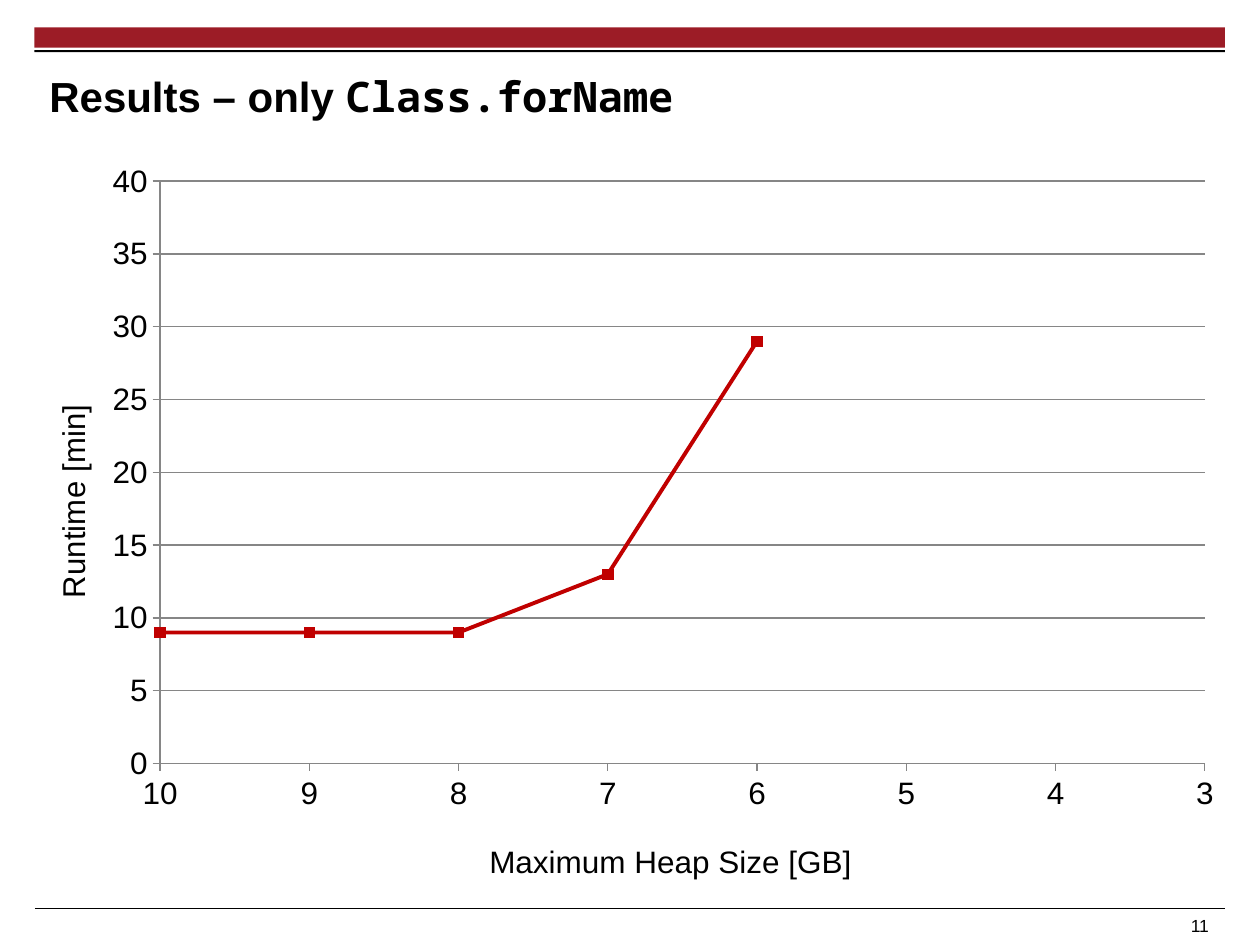
from dataclasses import dataclass

import pptx
import pptx.chart.data
import pptx.dml.color
import pptx.enum.chart
import pptx.enum.shapes
import pptx.enum.text
import pptx.oxml
import pptx.oxml.ns
import pptx.util
from pptx.dml.color import RGBColor
from pptx.util import Pt

BLACK = RGBColor(0x00, 0x00, 0x00)
CRIMSON = RGBColor(0x9C, 0x1C, 0x26)
RED = RGBColor(0xC0, 0x00, 0x00)
GRAY = RGBColor(0x86, 0x86, 0x86)
SANS, MONO = "Arial", "Noto Sans Mono"


@dataclass
class Bar:
    x: float
    y: float
    w: float
    h: float
    color: RGBColor


@dataclass
class Run:
    text: str
    size: float
    font: str = SANS
    bold: bool = False


HEADER_BARS = [
    Bar(19.6, 15.6, 680.4, 11.6, CRIMSON),
    Bar(19.6, 28.6, 680.4, 1.2, BLACK),
]
TITLE = [Run("Results – only ", 24, bold=True),
         Run("Class.forName", 24, MONO, True)]
HEAP_SIZES = ["10", "9", "8", "7", "6", "5", "4", "3"]
RUNTIMES = [9, 9, 9, 13, 29, None, None, None]


def add_bar(s, bar: Bar) -> None:
    sp = s.shapes.add_shape(pptx.enum.shapes.MSO_SHAPE.RECTANGLE,
                            Pt(bar.x), Pt(bar.y), Pt(bar.w), Pt(bar.h))
    sp.shadow.inherit = False
    sp.fill.solid()
    sp.fill.fore_color.rgb = bar.color
    sp.line.fill.background()


def add_text(s, x: float, y: float, w: float, h: float, runs: list[Run], align, anchor):
    sp = s.shapes.add_textbox(Pt(x), Pt(y), Pt(w), Pt(h))
    tf = sp.text_frame
    tf.word_wrap = True
    tf.vertical_anchor = anchor
    p = tf.paragraphs[0]
    p.alignment = align
    for run in runs:
        r = p.add_run()
        r.text = run.text
        r.font.size = Pt(run.size)
        r.font.name = run.font
        r.font.bold = run.bold
        r.font.color.rgb = BLACK
    return tf


def manual_layout(x: float, y: float, w: float = 0, h: float = 0):
    """Layout in fractions of the chart; a size is given only for the plot area."""
    parts = [("xMode", "edge"), ("yMode", "edge"), ("x", x), ("y", y)]
    if w:
        parts = [("layoutTarget", "inner"), *parts, ("w", w), ("h", h)]
    body = "".join(f'<c:{tag} val="{val}"/>' for tag, val in parts)
    return pptx.oxml.parse_xml(
        f'<c:layout {pptx.oxml.ns.nsdecls("c")}>'
        f"<c:manualLayout>{body}</c:manualLayout></c:layout>")


def style_axis(axis, title: str, x: float, y: float) -> None:
    axis.major_tick_mark = pptx.enum.chart.XL_TICK_MARK.OUTSIDE
    axis.minor_tick_mark = pptx.enum.chart.XL_TICK_MARK.NONE
    axis.format.line.color.rgb = GRAY
    axis.format.line.width = Pt(0.75)
    p = axis.axis_title.text_frame.paragraphs[0]
    r = p.add_run()
    r.text = title
    r.font.size = Pt(18)
    r.font.name = SANS
    r.font.bold = False
    r.font.color.rgb = BLACK
    # Place the title directly after its text
    elm = axis.axis_title._element
    for old in elm.findall(pptx.oxml.ns.qn("c:layout")):
        elm.remove(old)
    elm.find(pptx.oxml.ns.qn("c:tx")).addnext(manual_layout(x, y))


def add_runtime_chart(s) -> None:
    data = pptx.chart.data.CategoryChartData()
    data.categories = HEAP_SIZES
    data.add_series("Series 1", RUNTIMES)
    chart = s.shapes.add_chart(pptx.enum.chart.XL_CHART_TYPE.LINE_MARKERS,
                               Pt(20), Pt(88.6), Pt(674.6), Pt(419.8), data).chart
    chart.has_legend = False
    chart.has_title = False
    chart.font.size = Pt(18)
    chart.font.name = SANS
    chart.font.color.rgb = BLACK

    # Axes
    style_axis(chart.category_axis, "Maximum Heap Size [GB]", 0.38, 0.94)
    val = chart.value_axis
    style_axis(val, "Runtime [min]", 0.01, 0.34)
    val.minimum_scale, val.maximum_scale, val.major_unit = 0, 40, 5
    val.has_major_gridlines = True
    val.major_gridlines.format.line.color.rgb = GRAY
    val.major_gridlines.format.line.width = Pt(0.75)
    # The line starts on the value axis
    val._element.find(pptx.oxml.ns.qn("c:majorUnit")).addprevious(pptx.oxml.parse_xml(
        f'<c:crossBetween {pptx.oxml.ns.nsdecls("c")} val="midCat"/>'))

    # Series
    plot = chart.plots[0]
    plot.vary_by_categories = False
    series = plot.series[0]
    series.smooth = False
    series.format.line.color.rgb = RED
    series.format.line.width = Pt(2.25)
    series.marker.style = pptx.enum.chart.XL_MARKER_STYLE.SQUARE
    series.marker.size = 6
    series.marker.format.fill.solid()
    series.marker.format.fill.fore_color.rgb = RED
    series.marker.format.line.color.rgb = RED

    # Plot area
    area = chart._chartSpace.chart.plotArea
    for old in area.findall(pptx.oxml.ns.qn("c:layout")):
        area.remove(old)
    area.insert(0, manual_layout(0.106, 0.036, 0.885, 0.804))


def main() -> None:
    prs = pptx.Presentation()
    prs.slide_width, prs.slide_height = Pt(720), Pt(540)
    s = prs.slides.add_slide(prs.slide_layouts[6])

    # Header
    for bar in HEADER_BARS:
        add_bar(s, bar)

    # Footer
    line = s.shapes.add_connector(pptx.enum.shapes.MSO_CONNECTOR.STRAIGHT,
                                  Pt(20), Pt(519.4), Pt(700.2), Pt(519.4))
    line.line.color.rgb = BLACK
    line.line.width = Pt(0.6)
    line._element.spPr.append(
        pptx.oxml.parse_xml(f'<a:effectLst {pptx.oxml.ns.nsdecls("a")}/>'))
    add_text(s, 133.2, 519.4, 567.4, 18, [Run("11 ", 10)],
             pptx.enum.text.PP_ALIGN.RIGHT, pptx.enum.text.MSO_ANCHOR.TOP)

    # Title
    tf = add_text(s, 28.2, 32, 671.8, 45.4, TITLE,
                  pptx.enum.text.PP_ALIGN.LEFT, pptx.enum.text.MSO_ANCHOR.MIDDLE)
    tf.margin_left = tf.margin_right = tf.margin_top = tf.margin_bottom = 0

    # Chart
    add_runtime_chart(s)

    prs.save("out.pptx")


if __name__ == "__main__":
    main()
